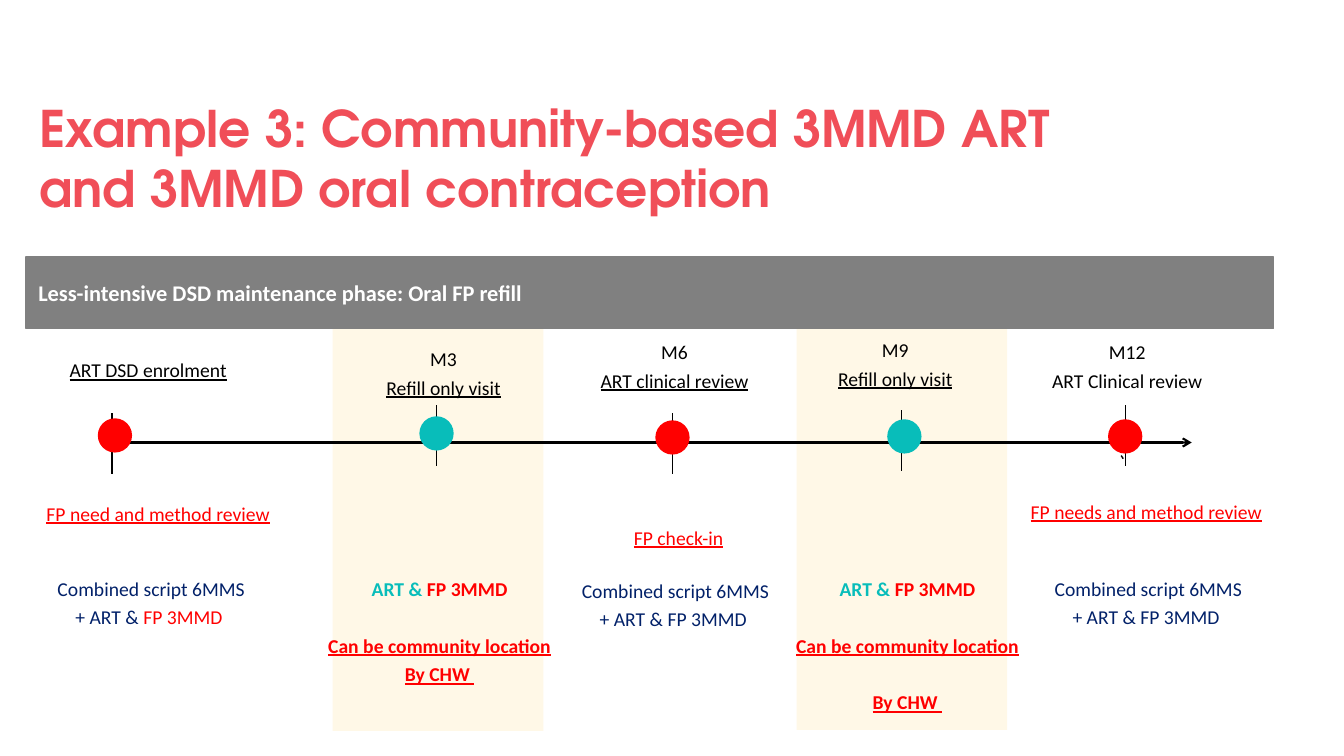
from dataclasses import dataclass

from lxml.etree import SubElement
from pptx import Presentation
from pptx.dml.color import RGBColor
from pptx.enum.shapes import MSO_CONNECTOR, MSO_SHAPE
from pptx.enum.text import MSO_ANCHOR, PP_ALIGN
from pptx.oxml.ns import qn
from pptx.util import Inches, Pt


@dataclass(frozen=True)
class Theme:
    title: str = "F04E58"
    header: str = "808080"
    band: str = "FFF1D0"
    black: str = "000000"
    white: str = "FFFFFF"
    red: str = "FF0000"
    teal: str = "08BDBA"
    navy: str = "022169"
    title_font: str = "TeX Gyre Adventor"
    body_font: str = "Calibri"
    title_size: int = 36
    header_size: int = 16
    body_size: int = 14
    blank_line: float = 20.3


THEME = Theme()


@dataclass(frozen=True)
class Run:
    text: str
    color: str = THEME.black
    underline: bool = False
    bold: bool = False


@dataclass(frozen=True)
class Label:
    box: tuple
    lines: list
    gaps: tuple = ()


@dataclass(frozen=True)
class Visit:
    dot: tuple
    color: str
    tick: tuple
    labels: list


def script_lines(*second_line):
    return [[Run("Combined script 6MMS", THEME.navy)], list(second_line)]


def refill_lines():
    return [
        [Run("ART & ", THEME.teal, bold=True), Run("FP 3MMD", THEME.red, bold=True)],
        [Run("Can be community location", THEME.red, True, True)],
        [Run("By CHW ", THEME.red, True, True)],
    ]


PLAIN_SCRIPT = script_lines(Run("+ ART & FP 3MMD ", THEME.navy))
REFILL_VISIT = Run("Refill only visit", underline=True)

BANDS = [(7.9, 3.25, 2.09, 3.99), (3.3, 3.26, 2.09, 3.99)]

VISITS = [
    Visit((0.97, 4.15), THEME.red, (1.11, 4.1), [
        Label((0.26, 3.46, 2.42, 0.36), [[Run("ART DSD enrolment", underline=True)]]),
        Label((0.28, 4.88, 2.58, 0.65),
              [[Run("FP need and method review", THEME.red, True)]]),
        Label((0.29, 5.63, 2.42, 0.93),
              script_lines(Run("+ ART & ", THEME.navy), Run("FP 3MMD ", THEME.red))),
    ]),
    Visit((4.16, 4.13), THEME.teal, (4.33, 4.02), [
        Label((3.36, 3.35, 2.08, 0.65), [[Run("M3")], [REFILL_VISIT]]),
        Label((3.15, 5.63, 2.42, 1.5), refill_lines(), (1,)),
    ]),
    Visit((6.5, 4.17), THEME.red, (6.67, 4.1), [
        Label((5.33, 3.28, 2.72, 0.65),
              [[Run("M6")], [Run("ART clinical review", underline=True)]]),
        Label((5.37, 5.12, 2.72, 0.36), [[Run("FP check-in", THEME.red, True)]]),
        Label((5.49, 5.65, 2.42, 0.93), PLAIN_SCRIPT),
    ]),
    Visit((8.8, 4.16), THEME.teal, (8.94, 4.07), [
        Label((7.84, 3.26, 2.08, 0.65), [[Run("M9")], [REFILL_VISIT]]),
        Label((7.79, 5.63, 2.42, 1.5), refill_lines(), (1, 2)),
    ]),
    Visit((10.99, 4.16), THEME.red, (11.16, 4.02), [
        Label((9.82, 3.28, 2.72, 0.65), [[Run("M12")], [Run("ART Clinical review")]]),
        Label((10.01, 4.86, 2.72, 0.65),
              [[Run("FP needs and method review", THEME.red, True)]]),
        Label((10.18, 5.63, 2.42, 0.93), PLAIN_SCRIPT),
    ]),
]


def inches(box):
    return [Inches(length) for length in box]


def add_run(paragraph, run, size, font_name):
    text_run = paragraph.add_run()
    text_run.text = run.text
    font = text_run.font
    font.name = font_name
    font.size = Pt(size)
    font.bold = run.bold
    font.underline = run.underline
    font.color.rgb = RGBColor.from_string(run.color)


def add_filled_shape(slide, kind, box, color):
    shape = slide.shapes.add_shape(kind, *inches(box))
    shape.shadow.inherit = False
    shape.fill.solid()
    shape.fill.fore_color.rgb = RGBColor.from_string(color)
    shape.line.fill.background()
    return shape


def add_line(slide, start, end, width):
    connector = slide.shapes.add_connector(
        MSO_CONNECTOR.STRAIGHT, *inches(start), *inches(end))
    connector.line.color.rgb = RGBColor.from_string(THEME.black)
    connector.line.width = Pt(width)
    SubElement(connector._element.spPr, qn("a:effectLst"))
    return connector


def add_title(slide, box):
    text_frame = slide.shapes.add_textbox(*inches(box)).text_frame
    text_frame.word_wrap = True
    text_frame.margin_right = Inches(0.5)
    text_frame.vertical_anchor = MSO_ANCHOR.MIDDLE
    paragraph = text_frame.paragraphs[0]
    paragraph.line_spacing = Pt(43)
    title = "Example 3: Community-based 3MMD ART and 3MMD oral contraception"
    add_run(paragraph, Run(title, THEME.title, bold=True),
            THEME.title_size, THEME.title_font)


def add_header(slide, box):
    header = add_filled_shape(slide, MSO_SHAPE.RECTANGLE, box, THEME.header)
    header.line.color.rgb = RGBColor.from_string(THEME.header)
    header.line.width = Pt(1)
    text_frame = header.text_frame
    text_frame.margin_left = text_frame.margin_right = Inches(0.12)
    text_frame.vertical_anchor = MSO_ANCHOR.MIDDLE
    paragraph = text_frame.paragraphs[0]
    paragraph.alignment = PP_ALIGN.LEFT
    text = "Less-intensive DSD maintenance phase: Oral FP refill"
    add_run(paragraph, Run(text, THEME.white, bold=True),
            THEME.header_size, THEME.body_font)


def add_band(slide, box):
    band = add_filled_shape(slide, MSO_SHAPE.RECTANGLE, box, THEME.band)
    color = band._element.spPr.find(qn("a:solidFill"))[0]
    SubElement(color, qn("a:alpha"), val="49000")


def add_axis(slide, left, top, width):
    axis = add_line(slide, (left, top), (left + width, top), 1.5)
    SubElement(axis.line._get_or_add_ln(), qn("a:tailEnd"), type="arrow")


def add_label(slide, label):
    text_frame = slide.shapes.add_textbox(*inches(label.box)).text_frame
    text_frame.word_wrap = True
    text_frame.margin_left = text_frame.margin_right = Inches(0.05)
    for index, runs in enumerate(label.lines):
        paragraph = text_frame.paragraphs[0] if index == 0 else text_frame.add_paragraph()
        paragraph.alignment = PP_ALIGN.CENTER
        paragraph.line_spacing = 1.2
        if index in label.gaps:
            paragraph.space_before = Pt(THEME.blank_line)
        for run in runs:
            add_run(paragraph, run, THEME.body_size, THEME.body_font)


def add_timeline(slide, left, top, width):
    for visit in VISITS:
        tick_left, tick_top = visit.tick
        add_line(slide, visit.tick, (tick_left, tick_top + 0.6), 1)
    add_line(slide, (11.12, 4.52), (11.14, 4.55), 1)
    add_axis(slide, left, top, width)
    for visit in VISITS:
        add_filled_shape(slide, MSO_SHAPE.OVAL, (*visit.dot, 0.34, 0.34), visit.color)
        for label in visit.labels:
            add_label(slide, label)


def main():
    presentation = Presentation()
    presentation.slide_width = Inches(13.33)
    presentation.slide_height = Inches(7.5)
    slide = presentation.slides.add_slide(presentation.slide_layouts[6])
    for box in BANDS:
        add_band(slide, box)
    add_title(slide, (0.29, 0.94, 11.3, 1.25))
    add_header(slide, (0.26, 2.55, 12.37, 0.71))
    add_timeline(slide, 1.1, 4.39, 10.72)
    presentation.save("out.pptx")


if __name__ == "__main__":
    main()
